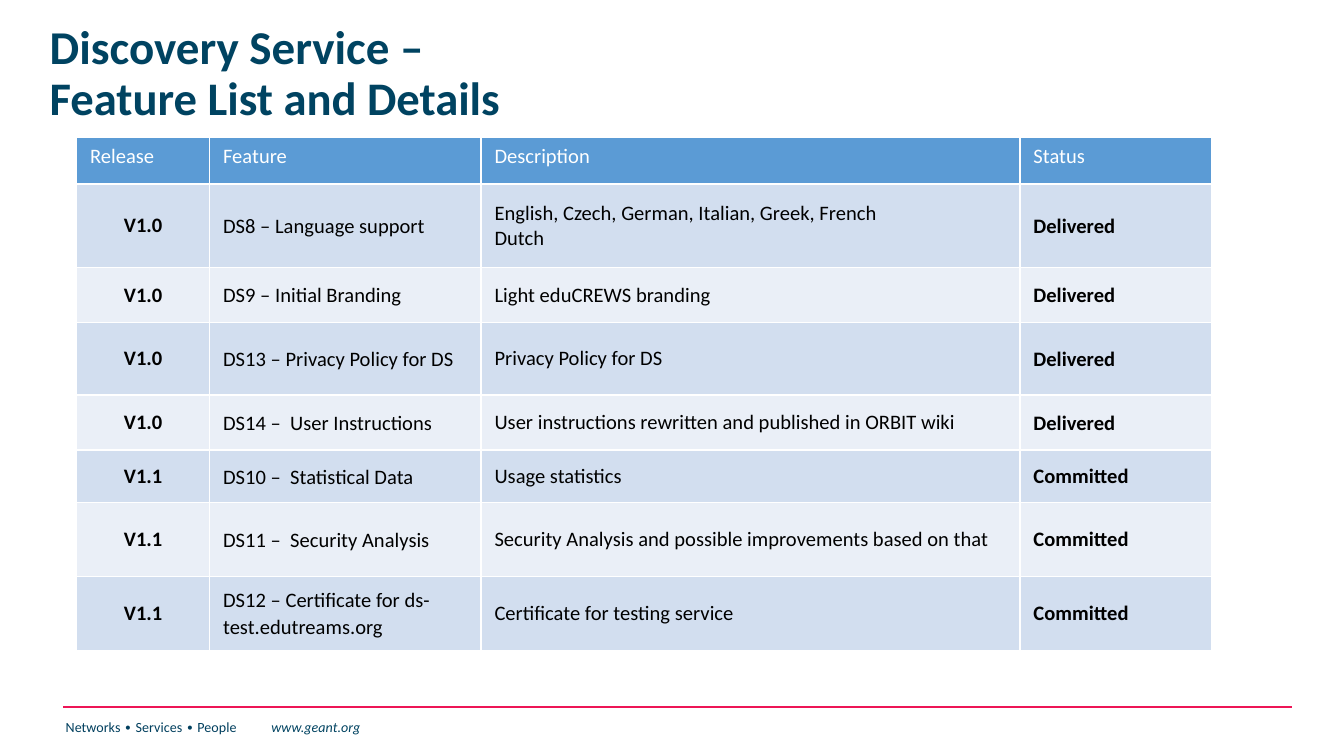
from lxml import etree
from pptx import Presentation
from pptx.dml.color import RGBColor
from pptx.enum.shapes import MSO_CONNECTOR
from pptx.enum.text import MSO_ANCHOR, MSO_AUTO_SIZE, PP_ALIGN
from pptx.oxml.ns import qn
from pptx.util import Inches, Pt

WIDTH = 10
HEIGHT = WIDTH * 9 / 16
NAVY, WHITE, BLACK = "004361", "FFFFFF", "000000"
HEAD_FILL, BANDS = "5B9BD5", ("D2DEEF", "EAEFF7")
COLS = (0.99, 2.02, 4.01, 1.43)
ROWS = (0.35, 0.62, 0.41, 0.54, 0.41, 0.39, 0.55, 0.55)
HEADS = ("Release", "Feature", "Description", "Status")
FEATURES = (
    ("V1.0", "DS8 – Language support",
     "English, Czech, German, Italian, Greek, French\vDutch", "Delivered"),
    ("V1.0", "DS9 – Initial Branding", "Light eduCREWS branding", "Delivered"),
    ("V1.0", "DS13 – Privacy Policy for DS", "Privacy Policy for DS", "Delivered"),
    ("V1.0", "DS14 –  User Instructions",
     "User instructions rewritten and published in ORBIT wiki", "Delivered"),
    ("V1.1", "DS10 –  Statistical Data", "Usage statistics", "Committed"),
    ("V1.1", "DS11 –  Security Analysis",
     "Security Analysis and possible improvements based on that", "Committed"),
    ("V1.1", "DS12 – Certificate for ds-test.edutreams.org",
     "Certificate for testing service", "Committed"),
)


def rgb(code):
    return RGBColor.from_string(code)


def style(run, size, color, bold=False, italic=False):
    font = run.font
    font.name, font.size = "Calibri", Pt(size)
    font.bold, font.italic = bold, italic
    font.color.rgb = rgb(color)


def add_title(slide, left, top, width, height):
    title = slide.shapes.title
    title.left, title.top = Inches(left), Inches(top)
    title.width, title.height = Inches(width), Inches(height)
    frame = title.text_frame
    frame.text = "Discovery Service –\vFeature List and Details"
    frame.auto_size = MSO_AUTO_SIZE.NONE
    frame.vertical_anchor = MSO_ANCHOR.MIDDLE
    para = frame.paragraphs[0]
    para.alignment, para.line_spacing = PP_ALIGN.LEFT, 0.9
    for run, size in zip(para.runs, (25.2, 25)):
        style(run, size, NAVY, bold=True)


def add_edges(cell, color, width):
    """Draw all four borders of a cell; call before filling it."""
    props = cell._tc.get_or_add_tcPr()
    for side in ("lnL", "lnR", "lnT", "lnB"):
        edge = etree.SubElement(props, qn(f"a:{side}"), w=str(Pt(width)))
        fill = etree.SubElement(edge, qn("a:solidFill"))
        etree.SubElement(fill, qn("a:srgbClr"), val=color)


def fill_cell(cell, text, row, col):
    head = row == 0
    add_edges(cell, WHITE, 1)
    cell.fill.solid()
    cell.fill.fore_color.rgb = rgb(HEAD_FILL if head else BANDS[(row - 1) % 2])
    cell.vertical_anchor = MSO_ANCHOR.TOP if head else MSO_ANCHOR.MIDDLE
    cell.text = text
    para = cell.text_frame.paragraphs[0]
    if not head:
        if col == 0:
            para.alignment = PP_ALIGN.CENTER
        if col == 1 or text == "Delivered":
            para.line_spacing, para.space_after = 1.07, Pt(8)
    for run in para.runs:
        style(run, 11, WHITE if head else BLACK,
              bold=not head and col in (0, 3))


def add_features(slide, left, top):
    frame = slide.shapes.add_table(
        len(ROWS), len(COLS), Inches(left), Inches(top),
        Inches(sum(COLS)), Inches(sum(ROWS)))
    table = frame.table
    for col, width in zip(table.columns, COLS):
        col.width = Inches(width)
    for row, height in zip(table.rows, ROWS):
        row.height = Inches(height)
    for r, texts in enumerate((HEADS, *FEATURES)):
        for c, text in enumerate(texts):
            fill_cell(table.cell(r, c), text, r, c)


def add_footer(slide, left, top, width):
    rule = slide.shapes.add_connector(
        MSO_CONNECTOR.STRAIGHT, Inches(left), Inches(top),
        Inches(left + width), Inches(top))
    rule.line.color.rgb = rgb("ED1556")
    rule.line.width = Pt(1)
    etree.SubElement(rule._element.spPr, qn("a:effectLst"))

    box = slide.shapes.add_textbox(
        Inches(left - 0.08), Inches(top + 0.04), Inches(3.41), Inches(0.35))
    frame = box.text_frame
    frame.word_wrap = True
    para = frame.paragraphs[0]
    tabs = etree.SubElement(para._p.get_or_add_pPr(), qn("a:tabLst"))
    etree.SubElement(tabs, qn("a:tab"), pos=str(Inches(1.53)), algn="l")
    motto, site = para.add_run(), para.add_run()
    motto.text, site.text = "Networks ∙ Services ∙ People\t", "www.geant.org"
    style(motto, 7.5, "003F5E")
    style(site, 7.5, NAVY, italic=True)


def main():
    deck = Presentation()
    deck.slide_width, deck.slide_height = Inches(WIDTH), Inches(HEIGHT)
    slide = deck.slides.add_slide(deck.slide_layouts[5])
    add_footer(slide, 0.47, 5.26, 9.14)
    add_title(slide, 0.27, 0.16, 7.87, 0.79)
    add_features(slide, 0.57, 1.02)
    deck.save("out.pptx")


if __name__ == "__main__":
    main()
